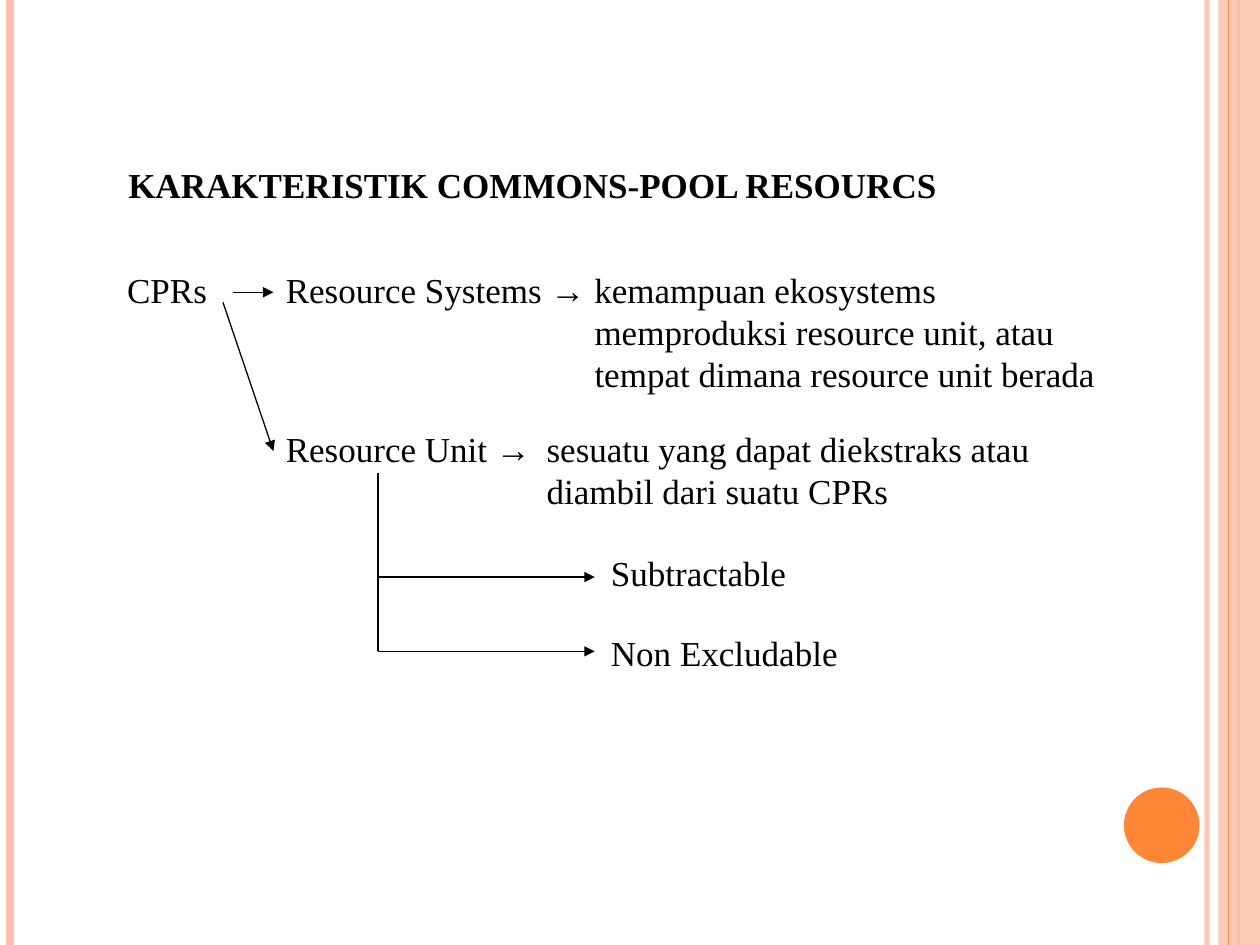
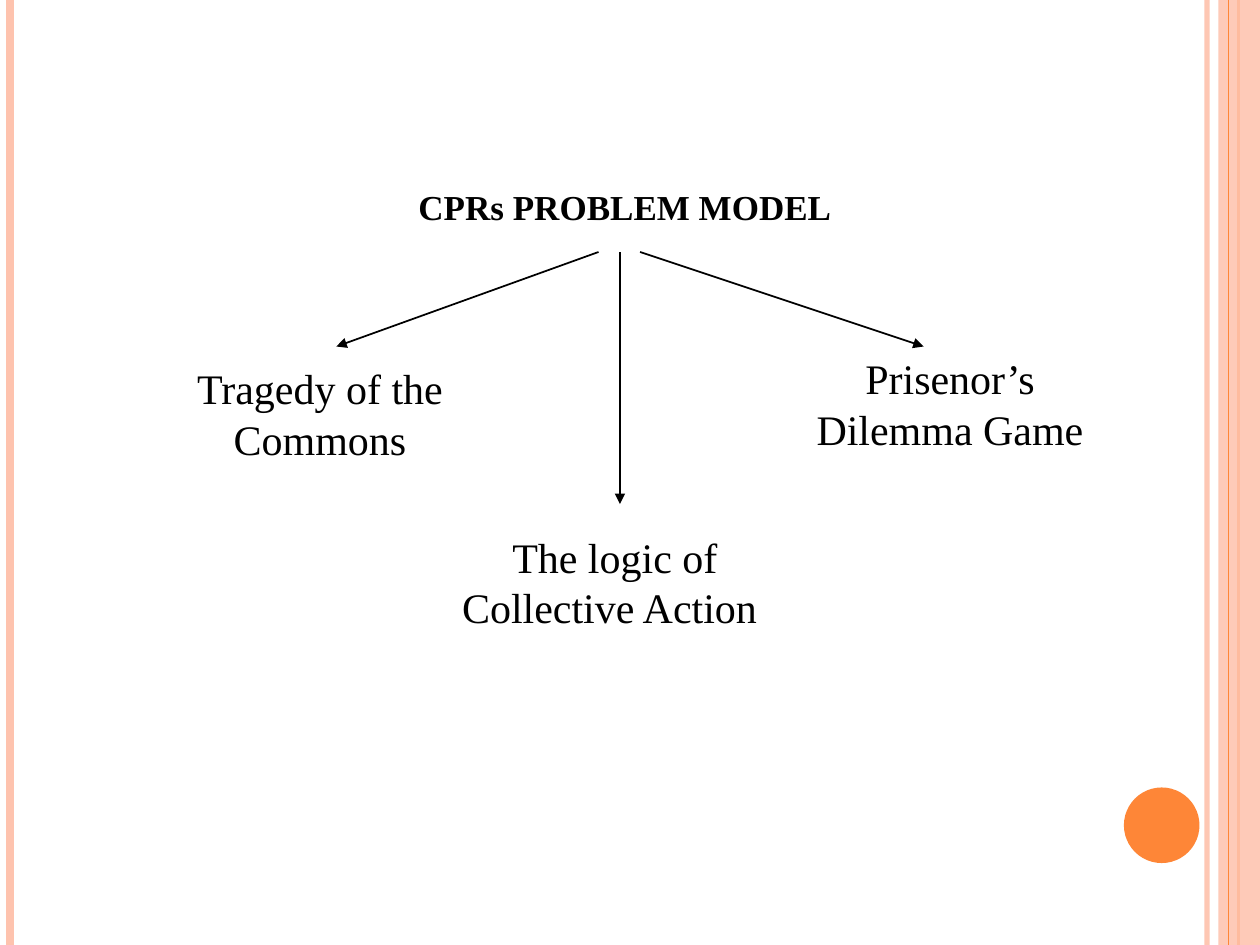
from pptx import Presentation
from pptx.dml.color import RGBColor
from pptx.enum import shapes, text
from pptx.oxml.ns import qn
from pptx.util import Inches, Pt
from lxml import etree

BLACK = RGBColor(0x00, 0x00, 0x00)
PEACH = RGBColor(0xFE, 0xC3, 0xAE)
ORANGE = RGBColor(0xFE, 0x86, 0x37)
FONT = "Times New Roman"
SLIDE_WIDTH, SLIDE_HEIGHT = 10, 7.5
TEXT_SIZE, MODEL_SIZE = 20, 24
CENTER = text.PP_ALIGN.CENTER


def set_opacity(fill, percent):
    color = fill._xPr.find(qn("a:solidFill"))[0]
    etree.SubElement(color, qn("a:alpha"), val=str(percent * 1000))


def add_line(slide, start, end, color=BLACK, width=0.75, arrow=False, opacity=100):
    line = slide.shapes.add_connector(
        shapes.MSO_CONNECTOR.STRAIGHT, *map(Inches, (*start, *end)))
    line.line.color.rgb = color
    line.line.width = Pt(width)
    if opacity < 100:
        set_opacity(line.line.fill, opacity)
    if arrow:
        etree.SubElement(line.line._get_or_add_ln(), qn("a:tailEnd"), type="triangle")
    etree.SubElement(line._element.spPr, qn("a:effectLst"))


def add_decoration(slide, preset, box, color, opacity=100):
    shape = slide.shapes.add_shape(preset, *map(Inches, box))
    shape.shadow.inherit = False
    shape.fill.solid()
    shape.fill.fore_color.rgb = color
    shape.line.fill.background()
    if opacity < 100:
        set_opacity(shape.fill, opacity)


def add_text(slide, box, content, size=TEXT_SIZE, bold=False, align=None,
             hanging=0, tab=None):
    """Add a wrapped text box; hanging is the indent of all lines but the first."""
    shape = slide.shapes.add_textbox(*map(Inches, box))
    frame = shape.text_frame
    frame.word_wrap = True
    frame.auto_size = text.MSO_AUTO_SIZE.SHAPE_TO_FIT_TEXT
    frame.text = content
    paragraph = frame.paragraphs[0]
    paragraph.alignment = align
    properties = paragraph._p.get_or_add_pPr()
    if hanging:
        properties.set("marL", str(Inches(hanging)))
        properties.set("indent", str(-Inches(hanging)))
    if tab:
        tabs = etree.SubElement(properties, qn("a:tabLst"))
        etree.SubElement(tabs, qn("a:tab"), pos=str(Inches(tab)), algn="l")
    for run in paragraph.runs:
        run.font.name = FONT
        run.font.size = Pt(size)
        run.font.bold = bold
        run.font.color.rgb = BLACK


def add_title(slide, box, content, align=None):
    add_text(slide, box, content, bold=True, align=align)


def add_vertical_stripe(slide, x, color, width, opacity=100):
    add_line(slide, (x, 0), (x, SLIDE_HEIGHT), color, width, opacity=opacity)


def add_framed_slide(presentation):
    """Add a blank slide with the shared stripes, side band and circle."""
    slide = presentation.slides.add_slide(presentation.slide_layouts[6])
    add_vertical_stripe(slide, 9.58, PEACH, 3, opacity=93)
    add_vertical_stripe(slide, 0.08, PEACH, 4.5)
    add_vertical_stripe(slide, 9.83, ORANGE, 1.5)
    add_decoration(slide, shapes.MSO_SHAPE.RECTANGLE,
                   (9.67, 0, 0.33, SLIDE_HEIGHT), PEACH, opacity=87)
    add_vertical_stripe(slide, 9.75, ORANGE, 0.75)
    add_decoration(slide, shapes.MSO_SHAPE.OVAL, (8.92, 6.25, 0.6, 0.6), ORANGE)
    return slide


def build_characteristics(presentation):
    slide = add_framed_slide(presentation)
    add_title(slide, (0.92, 1.25, 6.67, 0.43), "KARAKTERISTIK COMMONS-POOL RESOURCS")

    branch_x, trunk_x = 2.17, 3
    add_text(slide, (0.91, 2.08, 0.95, 0.43), "CPRs")
    add_text(slide, (branch_x, 3.34, 6.54, 0.77),
             "Resource Unit → \tsesuatu yang dapat diekstraks atau diambil dari suatu CPRs",
             hanging=2.07, tab=1.97)
    add_text(slide, (branch_x, 2.08, 6.69, 1.1),
             "Resource Systems → kemampuan ekosystems memproduksi resource unit, "
             "atau tempat dimana resource unit berada", hanging=2.45)
    add_line(slide, (1.85, 2.32), (branch_x, 2.32), arrow=True)
    add_line(slide, (1.77, 2.4), (branch_x, 3.58), arrow=True)

    properties = [("Subtractable", 4.33, 1.65, 4.58), ("Non Excludable", 4.96, 2.05, 5.17)]
    for name, top, width, arrow_y in properties:
        add_text(slide, (4.75, top, width, 0.43), name)
        add_line(slide, (trunk_x, arrow_y), (4.72, arrow_y), arrow=True)
    add_line(slide, (trunk_x, 3.75), (trunk_x, 5.17), width=1)


def build_problem_model(presentation):
    slide = add_framed_slide(presentation)
    add_title(slide, (3.17, 1.42, 3.58, 0.43), "CPRs PROBLEM MODEL", CENTER)
    models = [
        ("Tragedy of the Commons", (1.25, 2.83, 2.58, 0.9), 4.75, (2.67, 2.75)),
        ("The logic of Collective Action ", (3.42, 4.17, 2.92, 0.9), 4.92, (4.92, 4)),
        ("Prisenor’s Dilemma Game", (6.25, 2.75, 2.58, 0.9), 5.08, (7.33, 2.75)),
    ]
    for name, box, start_x, arrow_end in models:
        add_text(slide, box, name, MODEL_SIZE, align=CENTER)
        add_line(slide, (start_x, 2), arrow_end, width=1, arrow=True)


def main():
    presentation = Presentation()
    presentation.slide_width = Inches(SLIDE_WIDTH)
    presentation.slide_height = Inches(SLIDE_HEIGHT)
    build_characteristics(presentation)
    build_problem_model(presentation)
    presentation.save("out.pptx")


if __name__ == "__main__":
    main()
